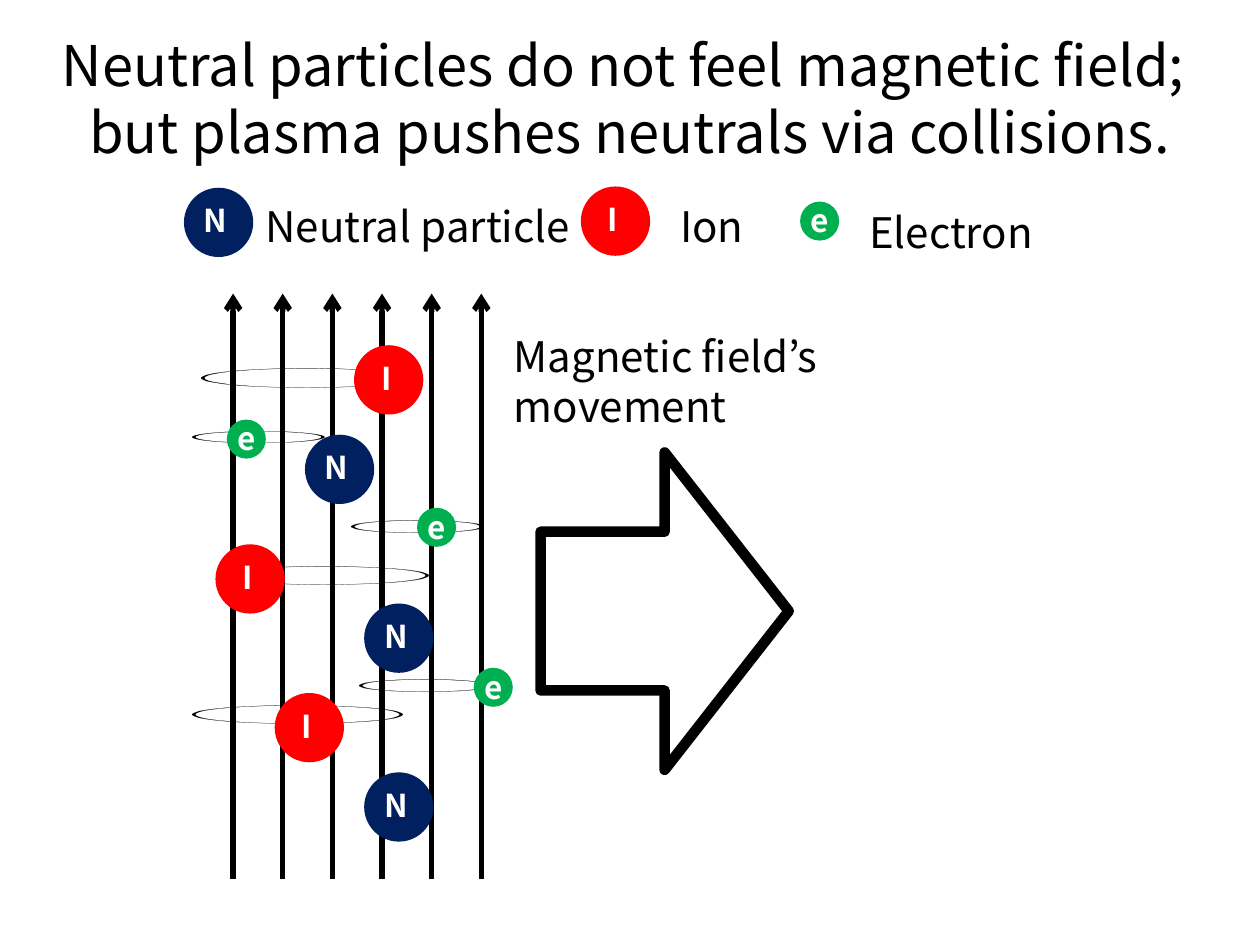
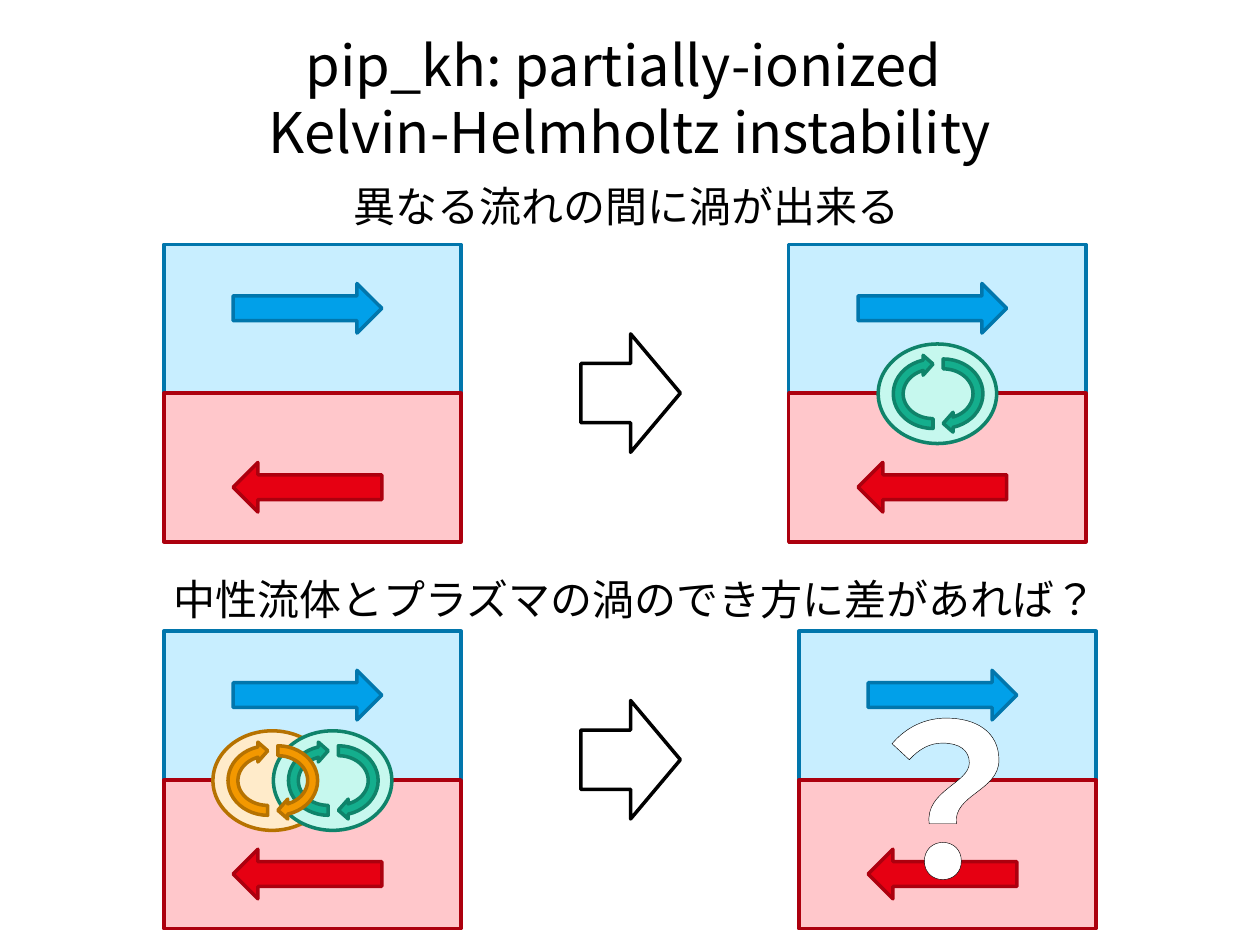
from lxml.etree import SubElement
from pptx import Presentation
from pptx.dml.color import RGBColor
from pptx.enum.lang import MSO_LANGUAGE_ID as LANGUAGE
from pptx.enum.shapes import MSO_CONNECTOR, MSO_SHAPE as SHAPE
from pptx.enum.text import MSO_ANCHOR, PP_ALIGN as ALIGN
from pptx.oxml.ns import qn
from pptx.util import Inches, Pt

# Shared style
FONT = "Noto Sans CJK JP"
BLACK, WHITE = "000000", "FFFFFF"
WIDTH, HEIGHT, TITLE_HEIGHT = 10, 7.5, 1.55

# Slide 1: particles in a magnetic field
FIELD_TITLE = ("Neutral particles do not feel magnetic field; \v"
               "but plasma pushes neutrals via collisions.")
# kind: (letter, colour, diameter, letter offset, letter alignment)
KINDS = {
    "neutral": ("N", "002060", 0.55, (0.06, 0.06), ALIGN.LEFT),
    "ion": ("I", "FF0000", 0.55, (0.06, 0.06), ALIGN.CENTER),
    "electron": ("e", "00B050", 0.31, (-0.04, -0.05), ALIGN.CENTER),
}
PARTICLES = [
    ("ion", 1.71, 4.32), ("ion", 2.81, 2.74), ("ion", 2.18, 5.5),
    ("electron", 3.76, 5.3), ("electron", 3.31, 4.03), ("electron", 1.8, 3.33),
    ("neutral", 2.42, 3.45), ("neutral", 2.89, 4.79), ("neutral", 2.89, 6.13),
]
LEGEND = [  # kind, particle corner, name, name box
    ("neutral", (1.46, 1.49), "Neutral particle", (2.01, 1.54, 2.93, 0.5)),
    ("ion", (4.61, 1.48), "Ion", (5.3, 1.54, 1.02, 0.5)),
    ("electron", (6.35, 1.6), "Electron", (6.8, 1.59, 1.81, 0.5)),
]
FIELD_LINES, FIELD_LEFT, FIELD_GAP = 6, 1.85, 0.394
FIELD_TOP, FIELD_BOTTOM = 2.33, 6.98
ORBITS = [  # left, top, diameter
    (1.54, 2.96, 1.02), (2.8, 3.67, 1.02), (2.87, 4.93, 1.02),
    (1.75, 3.75, 1.64), (1.61, 2.18, 1.64), (1.54, 4.85, 1.64),
]
ORBIT_TILT = 85  # degrees away from the viewer

# Slide 2: Kelvin-Helmholtz instability
VORTEX_TITLE = "pip_kh: partially-ionized \vKelvin-Helmholtz instability"
CAPTIONS = [
    ("異なる流れの間に渦が出来る", (1.31, 1.38, 7.32, 0.5)),
    ("中性流体とプラズマの渦のでき方に差があれば？", (1.14, 4.5, 7.8, 0.5)),
]
BAND_WIDTH, BAND_HEIGHT = 2.36, 1.18
FLOW_WIDTH, FLOW_HEIGHT = BAND_WIDTH / 2, BAND_HEIGHT / 3
# arrow shape, arrow height in its band, band fill, arrow fill, outline
FLOWS = [
    (SHAPE.RIGHT_ARROW, 0.31, "C8EEFF", "01A0E9", "0176AC"),
    (SHAPE.LEFT_ARROW, 0.55, "FFC7CB", "E60012", "AC000E"),
]
PANELS = [(1.3, 1.94), (6.26, 1.94), (1.3, 5.01), (6.34, 5.01)]
STEP_ARROW_TOPS = [2.65, 5.56]
GREEN = ("C6F8EE", "14AE8D", "0F836A")
ORANGE = ("FFEBCA", "F39800", "B67200")
VORTEX_GROUPS = [  # (middle x, middle y, colours), back to front
    [(7.44, 3.12, GREEN)],
    [(2.16, 6.19, ORANGE), (2.64, 6.19, GREEN)],
]


def rgb(value):
    return RGBColor.from_string(value)


def format_text(frame, size, color=BLACK, align=ALIGN.LEFT, bold=False):
    for para in frame.paragraphs:
        para.alignment = align
        font = para.font
        font.name, font.size, font.bold = FONT, Pt(size), bold
        font.color.rgb = rgb(color)
        for latin in list(para._p.iter(qn("a:latin"))):
            east_asian = SubElement(latin.getparent(), qn("a:ea"), typeface=FONT)
            latin.addnext(east_asian)


def add_text(page, text, area, size=24, **style):
    box = page.shapes.add_textbox(*map(Inches, area))
    box.text_frame.word_wrap = True
    box.text_frame.text = text
    format_text(box.text_frame, size, **style)
    return box


def add_shape(page, kind, area, fill=None, line=None, width=2, rotation=0):
    shape = page.shapes.add_shape(kind, *map(Inches, area))
    shape.shadow.inherit = False
    shape.rotation = rotation
    if fill:
        shape.fill.solid()
        shape.fill.fore_color.rgb = rgb(fill)
    else:
        shape.fill.background()
    if line:
        shape.line.color.rgb = rgb(line)
        shape.line.width = Pt(width)
        SubElement(shape.line._get_or_add_ln(), qn("a:round"))
    else:
        shape.line.fill.background()
    return shape


def add_page(deck, title):
    page = deck.slides.add_slide(deck.slide_layouts.get_by_name("Title Only"))
    box = page.shapes.title
    box.left, box.top = 0, 0
    box.width, box.height = Inches(WIDTH), Inches(TITLE_HEIGHT)
    box.text_frame.text = title
    box.text_frame.vertical_anchor = MSO_ANCHOR.MIDDLE
    format_text(box.text_frame, 32, align=ALIGN.CENTER)
    return page


def add_field_line(page, x):
    line = page.shapes.add_connector(
        MSO_CONNECTOR.STRAIGHT,
        *map(Inches, (x, FIELD_BOTTOM, x, FIELD_TOP)))
    line.line.color.rgb = rgb(BLACK)
    line.line.width = Pt(3)
    SubElement(line.line._get_or_add_ln(), qn("a:tailEnd"), type="arrow")
    SubElement(line._element.spPr, qn("a:effectLst"))


def add_orbit(page, left, top, diameter):
    orbit = add_shape(page, SHAPE.OVAL, (left, top, diameter, diameter),
                      line=BLACK)
    scene = SubElement(orbit._element.spPr, qn("a:scene3d"))
    camera = SubElement(scene, qn("a:camera"), prst="orthographicFront")
    SubElement(camera, qn("a:rot"), lat=str(ORBIT_TILT * 60000), lon="0", rev="0")
    SubElement(scene, qn("a:lightRig"), rig="threePt", dir="t")


def add_particle(page, kind, left, top):
    letter, color, size, (dx, dy), align = KINDS[kind]
    add_shape(page, SHAPE.OVAL, (left, top, size, size), color)
    add_text(page, letter, (left + dx, top + dy, 0.39, 0.4), 18,
             color=WHITE, align=align, bold=True)


def add_panel(page, left, top):
    for row, (arrow, offset, band, fill, line) in enumerate(FLOWS):
        y = top + row * BAND_HEIGHT
        add_shape(page, SHAPE.RECTANGLE,
                  (left, y, BAND_WIDTH, BAND_HEIGHT), band, line)
        add_shape(page, arrow,
                  (left + 0.55, y + offset, FLOW_WIDTH, FLOW_HEIGHT), fill, line)


def add_vortices(page, group):
    for x, y, (pale, _, line) in group:
        add_shape(page, SHAPE.OVAL, (x - 0.47, y - 0.39, 0.94, 0.79), pale, line)
    for x, y, (_, fill, line) in reversed(group):
        for shift, rotation in ((0.04, 90), (-0.04, 270)):
            add_shape(page, SHAPE.CIRCULAR_ARROW,
                      (x + shift - 0.31, y - 0.35, 0.63, 0.71),
                      fill, line, rotation=rotation)


def build_field_slide(deck):
    page = add_page(deck, FIELD_TITLE)
    for index in range(FIELD_LINES):
        add_field_line(page, FIELD_LEFT + index * FIELD_GAP)
    for orbit in ORBITS:
        add_orbit(page, *orbit)
    for particle in PARTICLES:
        add_particle(page, *particle)
    for kind, corner, name, area in LEGEND:
        add_particle(page, kind, *corner)
        add_text(page, name, area)
    # Direction in which the field moves
    add_shape(page, SHAPE.RIGHT_ARROW, (4.29, 3.59, 1.97, 2.52),
              line=BLACK, width=6)
    add_text(page, "Magnetic field’s movement", (3.98, 2.57, 2.68, 0.91))


def build_vortex_slide(deck):
    page = add_page(deck, VORTEX_TITLE)
    for text, area in CAPTIONS:
        caption = add_text(page, text, area, align=ALIGN.CENTER)
        span = caption.text_frame.paragraphs[0].runs[0]
        span.font.language_id = LANGUAGE.JAPANESE
    for corner in PANELS:
        add_panel(page, *corner)
    for top in STEP_ARROW_TOPS:
        add_shape(page, SHAPE.RIGHT_ARROW, (4.61, top, 0.79, 0.94), WHITE, BLACK)
    for group in VORTEX_GROUPS:
        add_vortices(page, group)
    # Outlined question mark over the last panel
    box = add_text(page, "？", (6.57, 5.25, 1.57, 2.12), 120,
                   color=WHITE, bold=True)
    span = box.text_frame.paragraphs[0].runs[0]
    outline = SubElement(span._r.get_or_add_rPr(), qn("a:ln"), w=str(Pt(3)))
    fill = SubElement(outline, qn("a:solidFill"))
    SubElement(fill, qn("a:srgbClr"), val=BLACK)


def main():
    deck = Presentation()
    deck.slide_width, deck.slide_height = Inches(WIDTH), Inches(HEIGHT)
    build_field_slide(deck)
    build_vortex_slide(deck)
    deck.save("out.pptx")


if __name__ == "__main__":
    main()
